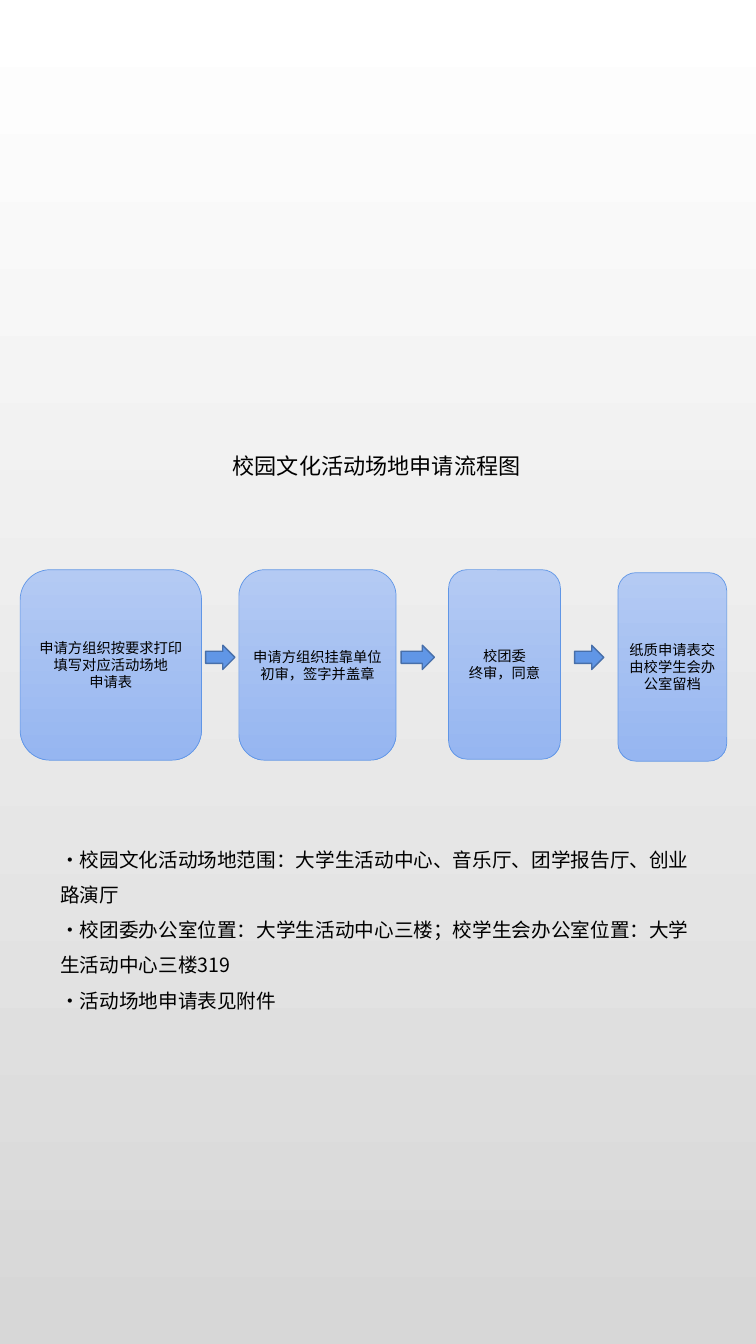
from dataclasses import dataclass

from pptx import Presentation
from pptx.dml.color import RGBColor as Rgb
from pptx.enum.shapes import MSO_SHAPE as Kind
from pptx.enum.text import MSO_ANCHOR as Anchor, PP_ALIGN as Align
from pptx.oxml.ns import qn
from pptx.util import Inches, Pt


@dataclass(frozen=True)
class Theme:
    font: str = "Noto Sans CJK SC"
    ink: str = "000000"
    page: tuple = ("FFFFFF", "D7D7D7")
    card: tuple = ("B4CAF3", "96B6F1")
    blue: str = "6096E6"
    edge: str = "476FAA"
    title: float = 15.8
    note: float = 14
    step: float = 10.2
    thin: float = 0.5
    bold: float = 1


def apply(target, style):
    for name, value in style.items():
        setattr(target, name, value)


def shade(fill, colors):
    """Fill from top to bottom with two colours."""
    fill.gradient()
    fill.gradient_angle = 270
    for stop, color in zip(fill.gradient_stops, colors):
        stop.color.rgb = Rgb.from_string(color)


class Board:
    """A slide measured in grid columns and rows."""

    cols, rows = 75, 133.3

    def __init__(self, deck, theme):
        self.theme = theme
        self.slide = deck.slides.add_slide(deck.slide_layouts[6])
        self.col = deck.slide_width / self.cols
        self.row = deck.slide_height / self.rows
        shade(self.slide.background.fill, theme.page)

    def place(self, left, top, width, height):
        return (round(left * self.col), round(top * self.row),
                round(width * self.col), round(height * self.row))

    def label(self, frame, lines, size, frame_style, line_style):
        apply(frame, {"word_wrap": True, **frame_style})
        frame.text = "\n".join(lines)
        for line in frame.paragraphs:
            apply(line, line_style)
            for run in line.runs:
                apply(run.font, {"size": Pt(size), "name": self.theme.font})
                run.font.color.rgb = Rgb.from_string(self.theme.ink)
                # East Asian font and language
                props = run._r.get_or_add_rPr()
                props.set("lang", "zh-CN")
                latin = props.find(qn("a:latin"))
                east = props.makeelement(qn("a:ea"), {"typeface": self.theme.font})
                latin.addnext(east)

    def shape(self, kind, area, edge, weight):
        item = self.slide.shapes.add_shape(kind, *self.place(*area))
        item.shadow.inherit = False
        item.line.color.rgb = Rgb.from_string(edge)
        item.line.width = Pt(weight)
        return item

    def card(self, area, lines):
        item = self.shape(Kind.ROUNDED_RECTANGLE, area, self.theme.blue, self.theme.thin)
        shade(item.fill, self.theme.card)
        side, edge = Inches(0.06), Inches(0.03)
        self.label(item.text_frame, lines, self.theme.step,
                   {"vertical_anchor": Anchor.MIDDLE, "margin_left": side,
                    "margin_right": side, "margin_top": edge, "margin_bottom": edge},
                   {"alignment": Align.CENTER})

    def arrow(self, area):
        item = self.shape(Kind.RIGHT_ARROW, area, self.theme.edge, self.theme.bold)
        item.fill.solid()
        item.fill.fore_color.rgb = Rgb.from_string(self.theme.blue)

    def text(self, area, lines, size, **style):
        box = self.slide.shapes.add_textbox(*self.place(*area))
        self.label(box.text_frame, lines, size, {}, style)


# Steps: area in columns and rows, then lines of text
STEPS = [
    ((2, 56.5, 18, 18.9), ["申请方组织按要求打印填写对应活动场地", "申请表"]),
    ((23.7, 56.5, 15.6, 18.9), ["申请方组织挂靠单位初审，签字并盖章"]),
    ((44.5, 56.5, 11.1, 18.8), ["校团委", "终审，同意"]),
    ((61.3, 56.8, 10.8, 18.7), ["纸质申请表交由校学生会办公室留档"]),
]
# Arrows: left edge and width in columns
ARROWS = [(20.4, 2.9), (39.8, 3.3), (57, 2.9)]
NOTES = [
    "·校园文化活动场地范围：大学生活动中心、音乐厅、团学报告厅、创业路演厅",
    "·校团委办公室位置：大学生活动中心三楼；校学生会办公室位置：大学生活动中心三楼319",
    "·活动场地申请表见附件",
]


def main():
    deck = Presentation()
    apply(deck, {"slide_width": Inches(7.5), "slide_height": Inches(13.33)})
    theme = Theme()
    board = Board(deck, theme)

    # Title
    board.text((22.1, 44.4, 30.9, 3.7), ["校园文化活动场地申请流程图"], theme.title)

    # Flow
    for area, lines in STEPS:
        board.card(area, lines)
    for left, width in ARROWS:
        board.arrow((left, 64, width, 2.4))

    # Notes
    board.text((5, 82.4, 65, 18.7), NOTES, theme.note, line_spacing=1.5)

    deck.save("out.pptx")


if __name__ == "__main__":
    main()
